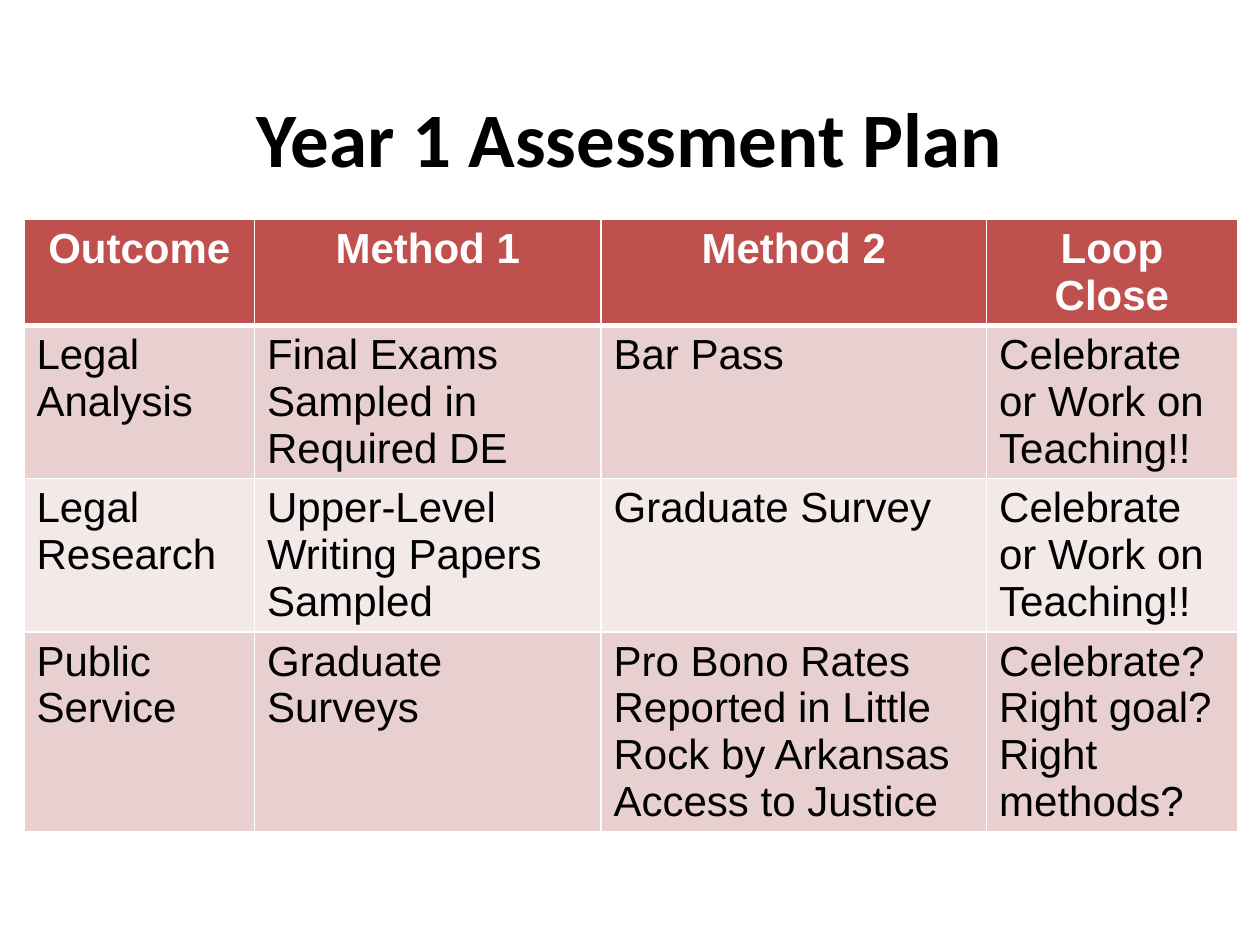
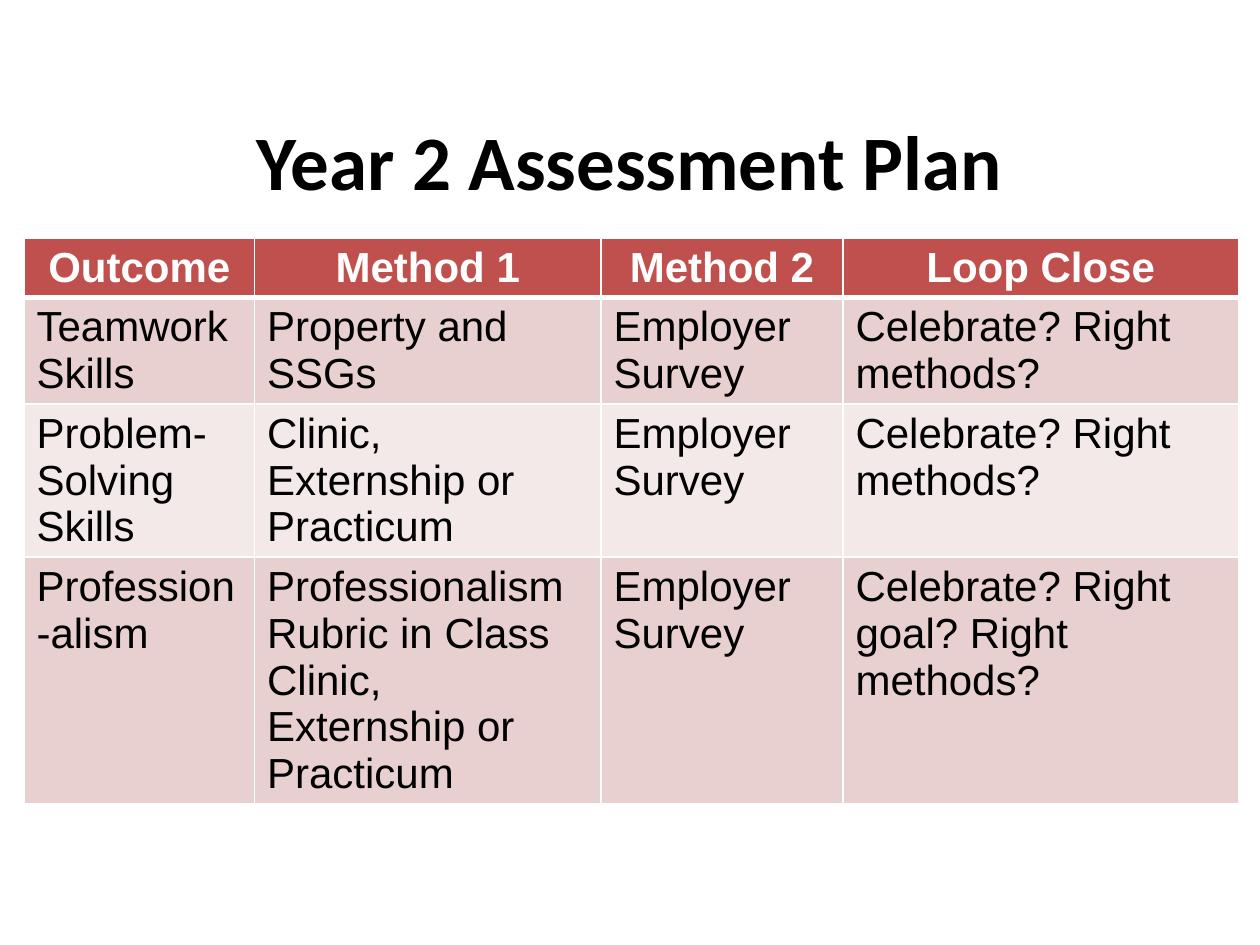
from lxml.etree import SubElement
from pptx import Presentation
from pptx.dml.color import RGBColor
from pptx.enum.text import MSO_ANCHOR as Anchor, PP_ALIGN as Align
from pptx.oxml.ns import qn
from pptx.util import Inches, Pt

HEADER_FILL = "C0504D"
BAND_FILLS = ("E8D0D0", "F4E9E9")
WHITE, BLACK = "FFFFFF", "000000"
TITLE_FONT = {"name": "Calibri", "size": Pt(44), "bold": True}
HEADER_FONT = {"name": "Arial", "size": Pt(24), "bold": True}
BODY_FONT = {**HEADER_FONT, "bold": False}
HEADINGS = ("Outcome", "Method 1", "Method 2", "Loop Close")
ROW_HEIGHT = 0.41  # rows grow to fit their text


def color(hex_code):
    return RGBColor.from_string(hex_code)


class PlanDeck:
    """Holds the shared style and the current slide."""

    def __init__(self):
        self.deck = Presentation()
        self.deck.slide_width = Inches(10)
        self.deck.slide_height = Inches(7.5)
        self.page = None

    def add_page(self):
        self.page = self.deck.slides.add_slide(self.deck.slide_layouts[5])
        fill = self.page.background.fill
        fill.solid()
        fill.fore_color.rgb = color(WHITE)

    def style(self, frame, font_values, hex_code, align):
        for para in frame.paragraphs:
            para.alignment = align
            for span in para.runs:
                for name, value in font_values.items():
                    setattr(span.font, name, value)
                span.font.color.rgb = color(hex_code)

    def title(self, text, top):
        box = self.page.shapes.title
        place = {"left": 0.5, "top": top, "width": 9, "height": 1.25}
        for name, value in place.items():
            setattr(box, name, Inches(value))
        box.text_frame.text = text
        box.text_frame.vertical_anchor = Anchor.MIDDLE
        self.style(box.text_frame, TITLE_FONT, BLACK, Align.CENTER)

    def borders(self, cell, top, bottom):
        properties = cell._tc.get_or_add_tcPr()
        for side, points in (("L", 1), ("R", 1), ("T", top), ("B", bottom)):
            line = SubElement(properties, qn(f"a:ln{side}"), w=str(Pt(points)))
            fill = SubElement(line, qn("a:solidFill"))
            SubElement(fill, qn("a:srgbClr"), val=WHITE)

    def table(self, top, height, widths, rows):
        rows = [HEADINGS, *rows]
        frame = self.page.shapes.add_table(
            len(rows), len(widths), Inches(0.19), Inches(top),
            Inches(sum(widths)), Inches(height))
        grid = frame.table
        for column, width in zip(grid.columns, widths):
            column.width = Inches(width)
        for row_index, texts in enumerate(rows):
            grid.rows[row_index].height = Inches(ROW_HEIGHT)
            is_header = row_index == 0
            for column_index, text in enumerate(texts):
                cell = grid.cell(row_index, column_index)
                cell.text = text
                # The thick rule lies between the header and the first row
                self.borders(cell, top=3 if row_index == 1 else 1,
                             bottom=3 if is_header else 1)
                cell.fill.solid()
                cell.fill.fore_color.rgb = color(
                    HEADER_FILL if is_header else BAND_FILLS[(row_index - 1) % 2])
                if is_header:
                    self.style(cell.text_frame, HEADER_FONT, WHITE, Align.CENTER)
                else:
                    self.style(cell.text_frame, BODY_FONT, BLACK, Align.LEFT)
        frame.height = Inches(height)


def main():
    plan = PlanDeck()

    # Year 1
    plan.add_page()
    plan.title("Year 1 Assessment Plan", top=0.46)
    work_on_teaching = "Celebrate or Work on Teaching!!"
    plan.table(1.74, 4.8, (1.83, 2.75, 3.06, 1.99), [
        ("Legal Analysis", "Final Exams Sampled in Required DE",
         "Bar Pass", work_on_teaching),
        ("Legal Research", "Upper-Level Writing Papers Sampled",
         "Graduate Survey", work_on_teaching),
        ("Public Service", "Graduate Surveys",
         "Pro Bono Rates Reported in Little Rock by Arkansas Access to Justice",
         "Celebrate? Right goal? Right methods?"),
    ])

    # Year 2
    plan.add_page()
    plan.title("Year 2 Assessment Plan", top=0.64)
    survey = "Employer Survey"
    practice = "Clinic, Externship or Practicum"
    right_methods = "Celebrate? Right methods?"
    plan.table(1.89, 4.4, (1.83, 2.75, 1.92, 3.14), [
        ("Teamwork Skills", "Property and SSGs", survey, right_methods),
        ("Problem-Solving Skills", practice, survey, right_methods),
        ("Profession-alism", f"Professionalism Rubric in Class\n{practice}",
         survey, "Celebrate? Right goal? Right methods?"),
    ])

    plan.deck.save("out.pptx")


if __name__ == "__main__":
    main()
